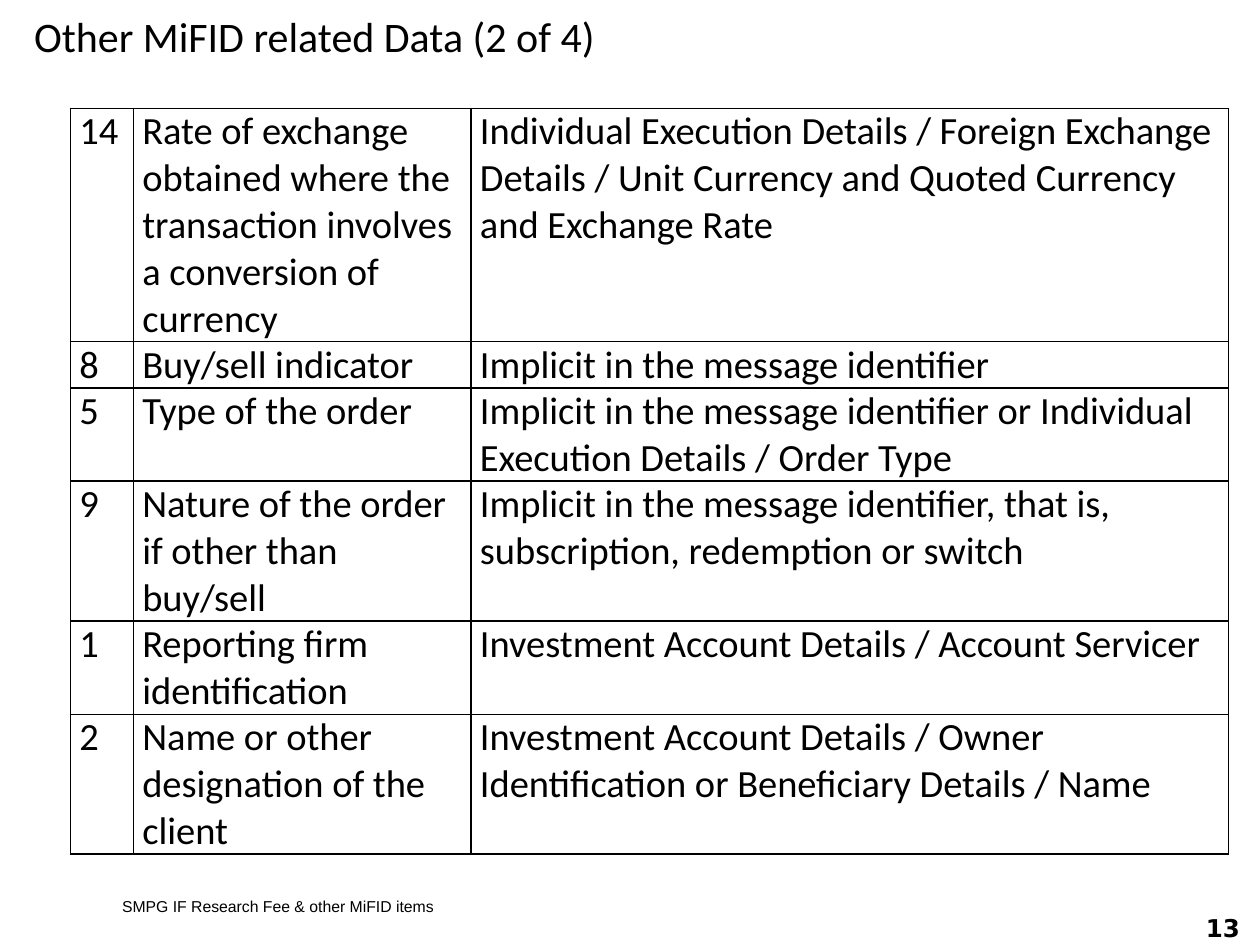
"""Build the slide of MiFID related data items."""
from dataclasses import dataclass

import lxml.etree
import pptx
import pptx.dml.color
import pptx.enum.text
import pptx.oxml.ns
import pptx.util

Inches = pptx.util.Inches
Align = pptx.enum.text.PP_ALIGN
Anchor = pptx.enum.text.MSO_ANCHOR


@dataclass(frozen=True)
class Theme:
    ink: str = "000000"
    paper: str = "FFFFFF"
    face: str = "Calibri"
    head: int = 24
    body: int = 22
    foot: int = 9
    page: int = 14
    rule: int = 1


@dataclass(frozen=True)
class Item:
    num: str
    name: str
    source: str
    lines: int


@dataclass(frozen=True)
class Note:
    text: str
    box: tuple[float, float, float, float]
    face: str
    size: int
    bold: bool = False
    align: Align = Align.LEFT


THEME = Theme()
COLS = (0.5, 2.68, 6.01)
LINE = 0.37
ITEMS = (
    Item("14", "Rate of exchange obtained where the transaction involves a conversion of currency",
         "Individual Execution Details / Foreign Exchange Details / "
         "Unit Currency and Quoted Currency and Exchange Rate", 5),
    Item("8", "Buy/sell indicator", "Implicit in the message identifier", 1),
    Item("5", "Type of the order",
         "Implicit in the message identifier or Individual Execution Details / Order Type", 2),
    Item("9", "Nature of the order if other than buy/sell",
         "Implicit in the message identifier, that is, subscription, redemption or switch", 3),
    Item("1", "Reporting firm identification",
         "Investment Account Details / Account Servicer", 2),
    Item("2", "Name or other designation of the client",
         "Investment Account Details / Owner Identification or Beneficiary Details / Name", 3),
)
NOTES = (
    Note("SMPG IF Research Fee & other MiFID items", (0.87, 7.07, 6.21, 0.25),
         "Arial", THEME.foot),
    Note("13", (9.11, 7.24, 0.83, 0.25), "DejaVu Sans", THEME.page, True, Align.RIGHT),
)


def write(frame, text: str, face: str, size: int, bold: bool = False,
          align: Align = Align.LEFT) -> None:
    """Put one styled paragraph in a text frame."""
    frame.word_wrap = True
    para = frame.paragraphs[0]
    para.text = text
    para.alignment = align
    font = para.font
    font.name, font.size, font.bold = face, pptx.util.Pt(size), bold
    font.color.rgb = pptx.dml.color.RGBColor.from_string(THEME.ink)


def add_title(slide, text: str) -> None:
    """Place and fill the title."""
    title = slide.shapes.title
    title.left, title.top = Inches(0.17), Inches(0)
    title.width, title.height = Inches(9.73), Inches(0.56)
    title.text_frame.vertical_anchor = Anchor.MIDDLE
    write(title.text_frame, text, THEME.face, THEME.head)


def add_note(slide, note: Note) -> None:
    """Add a small line of text at the foot."""
    frame = slide.shapes.add_textbox(*map(Inches, note.box)).text_frame
    frame.vertical_anchor = Anchor.MIDDLE
    write(frame, note.text, note.face, note.size, note.bold, note.align)


def add_rules(cell) -> None:
    """Draw a thin line on each side of a cell."""
    props = cell._tc.get_or_add_tcPr()
    for side in ("lnL", "lnR", "lnT", "lnB"):
        line = lxml.etree.SubElement(props, pptx.oxml.ns.qn(f"a:{side}"),
                                     w=str(pptx.util.Pt(THEME.rule)))
        fill = lxml.etree.SubElement(line, pptx.oxml.ns.qn("a:solidFill"))
        lxml.etree.SubElement(fill, pptx.oxml.ns.qn("a:srgbClr"), val=THEME.ink)


def fill_cell(cell, text: str) -> None:
    """Style one cell and write its text."""
    cell.margin_left = cell.margin_right = Inches(0.07)
    cell.margin_top = cell.margin_bottom = 0
    add_rules(cell)
    cell.fill.solid()
    cell.fill.fore_color.rgb = pptx.dml.color.RGBColor.from_string(THEME.paper)
    write(cell.text_frame, text, THEME.face, THEME.body)


def add_items(slide, items: tuple[Item, ...]) -> None:
    """Add the table with one row per item."""
    high = LINE * sum(item.lines for item in items)
    table = slide.shapes.add_table(len(items), len(COLS), Inches(0.56), Inches(0.86),
                                   Inches(sum(COLS)), Inches(high)).table
    table.first_row = table.horz_banding = False
    for col, width in zip(table.columns, COLS):
        col.width = Inches(width)
    for row, item in zip(table.rows, items):
        row.height = Inches(LINE * item.lines)
        for cell, text in zip(row.cells, (item.num, item.name, item.source)):
            fill_cell(cell, text)


def main() -> None:
    """Build and save the deck."""
    deck = pptx.Presentation()
    deck.slide_width, deck.slide_height = Inches(10), Inches(7.5)
    slide = deck.slides.add_slide(deck.slide_layouts[5])
    add_title(slide, "Other MiFID related Data (2 of 4)")
    for note in NOTES:
        add_note(slide, note)
    add_items(slide, ITEMS)
    deck.save("out.pptx")


if __name__ == "__main__":
    main()
